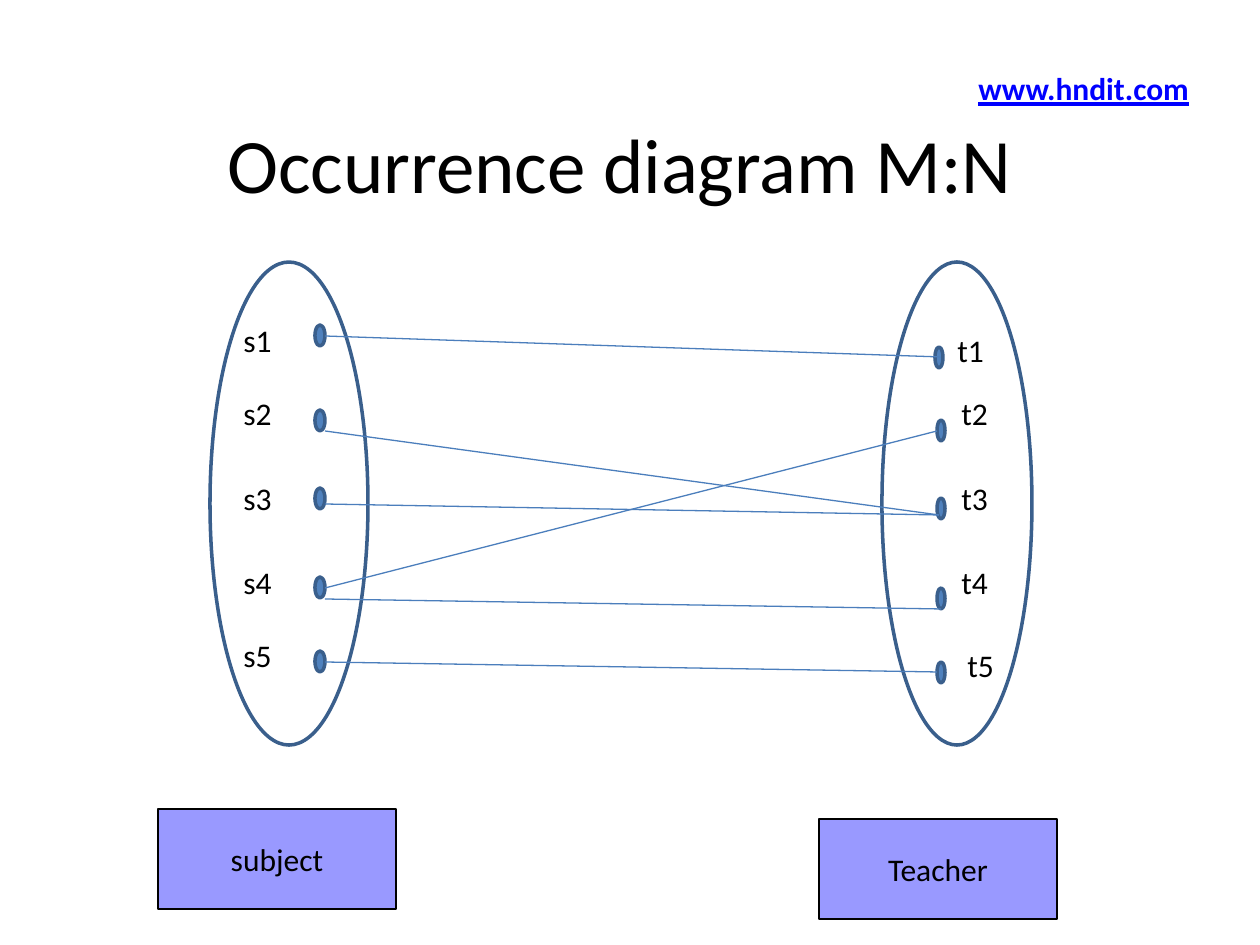
from pptx import Presentation
from pptx.dml.color import RGBColor
from pptx.enum.shapes import MSO_CONNECTOR, MSO_SHAPE
from pptx.enum.text import MSO_ANCHOR, MSO_AUTO_SIZE, PP_ALIGN
from pptx.oxml.ns import qn
from pptx.util import Emu, Inches, Pt

OVAL, RECT = MSO_SHAPE.OVAL, MSO_SHAPE.RECTANGLE
STRAIGHT = MSO_CONNECTOR.STRAIGHT
LEFT, CENTER = PP_ALIGN.LEFT, PP_ALIGN.CENTER
TOP, MIDDLE = MSO_ANCHOR.TOP, MSO_ANCHOR.MIDDLE
PX = Inches(1) / 126

COLORS = {
    "text": "000000", "url": "0000FF", "box": "9999FF", "border": "000000",
    "dot": "4F81BD", "outline": "3A5F8C", "link": "4B7EBC",
}


def rgb(name):
    return RGBColor.from_string(COLORS[name])


def emu(*lengths):
    return [Emu(round(length * PX)) for length in lengths]


class Diagram:
    font = "Calibri"

    def __init__(self, slide):
        self.slide = slide

    def set_text(self, shape, text, size=18, color="text", align=LEFT,
                 anchor=TOP, wrap=True, **formats):
        frame = shape.text_frame
        frame.word_wrap = wrap
        frame.vertical_anchor = anchor
        paragraph = frame.paragraphs[0]
        paragraph.alignment = align
        run = paragraph.add_run()
        run.text = text
        run.font.color.rgb = rgb(color)
        formats.update(name=self.font, size=Pt(size))
        for key, value in formats.items():
            setattr(run.font, key, value)

    def text(self, box, text, grow=True, **style):
        shape = self.slide.shapes.add_textbox(*emu(*box))
        self.set_text(shape, text, **style)
        if grow:
            shape.text_frame.auto_size = MSO_AUTO_SIZE.SHAPE_TO_FIT_TEXT

    def shape(self, kind, box, line, width, fill=None):
        shape = self.slide.shapes.add_shape(kind, *emu(*box))
        shape.shadow.inherit = False
        if fill:
            shape.fill.solid()
            shape.fill.fore_color.rgb = rgb(fill)
        else:
            shape.fill.background()
        shape.line.color.rgb = rgb(line)
        shape.line.width = Pt(width)
        return shape

    def entity(self, box, name):
        shape = self.shape(RECT, box, "border", 0.75, "box")
        self.set_text(shape, name, align=CENTER, anchor=MIDDLE, wrap=False)

    def occurrence_set(self, outline, dot_width, label_width, members):
        """Draw the set's outline, then a dot and a label per member."""
        self.shape(OVAL, outline, "outline", 2)
        for name, dot, label in members:
            self.shape(OVAL, (*dot, dot_width, 21), "outline", 2, "dot")
            self.text((*label, label_width, 50), name)

    def link(self, start, end):
        line = self.slide.shapes.add_connector(STRAIGHT, *emu(*start, *end))
        line.line.color.rgb = rgb("link")
        line.line.width = Pt(0.75)
        properties = line._element.spPr
        properties.append(properties.makeelement(qn("a:effectLst"), {}))


SUBJECT_ROWS = [(325, 315), (410, 388), (488, 473), (577, 557), (651, 630)]
SUBJECTS = [(f"s{number}", (315, dot_y), (231, label_y))
            for number, (dot_y, label_y) in enumerate(SUBJECT_ROWS, 1)]
TEACHERS = [
    ("t1", (935, 347), (945, 325)),
    ("t2", (937, 420), (949, 388)),
    ("t3", (937, 498), (949, 473)),
    ("t4", (937, 588), (949, 557)),
    ("t5", (937, 662), (955, 640)),
]
LINK_START_X = 325
LINKS = [  # start y, end point
    (336, (941, 357)),
    (599, (941, 609)),
    (588, (937, 431)),
    (504, (939, 515)),
    (431, (939, 515)),
    (662, (937, 672)),
]


def main():
    presentation = Presentation()
    presentation.slide_width, presentation.slide_height = Inches(10), Inches(7.5)
    blank = presentation.slide_layouts[6]
    diagram = Diagram(presentation.slides.add_slide(blank))

    diagram.text((53, 84, 1134, 158), "Occurrence diagram M:N", grow=False,
                 size=44, align=CENTER, anchor=MIDDLE)
    diagram.entity((158, 809, 238, 100), "subject")
    diagram.entity((819, 819, 238, 100), "Teacher")
    diagram.occurrence_set((882, 262, 150, 483), 8, 71, TEACHERS)
    diagram.occurrence_set((210, 262, 158, 483), 10, 73, SUBJECTS)
    for start_y, end in LINKS:
        diagram.link((LINK_START_X, start_y), end)
    diagram.text((966, 63, 237, 50), "www.hndit.com", color="url", wrap=False,
                 bold=True, underline=True)

    presentation.save("out.pptx")


if __name__ == "__main__":
    main()
